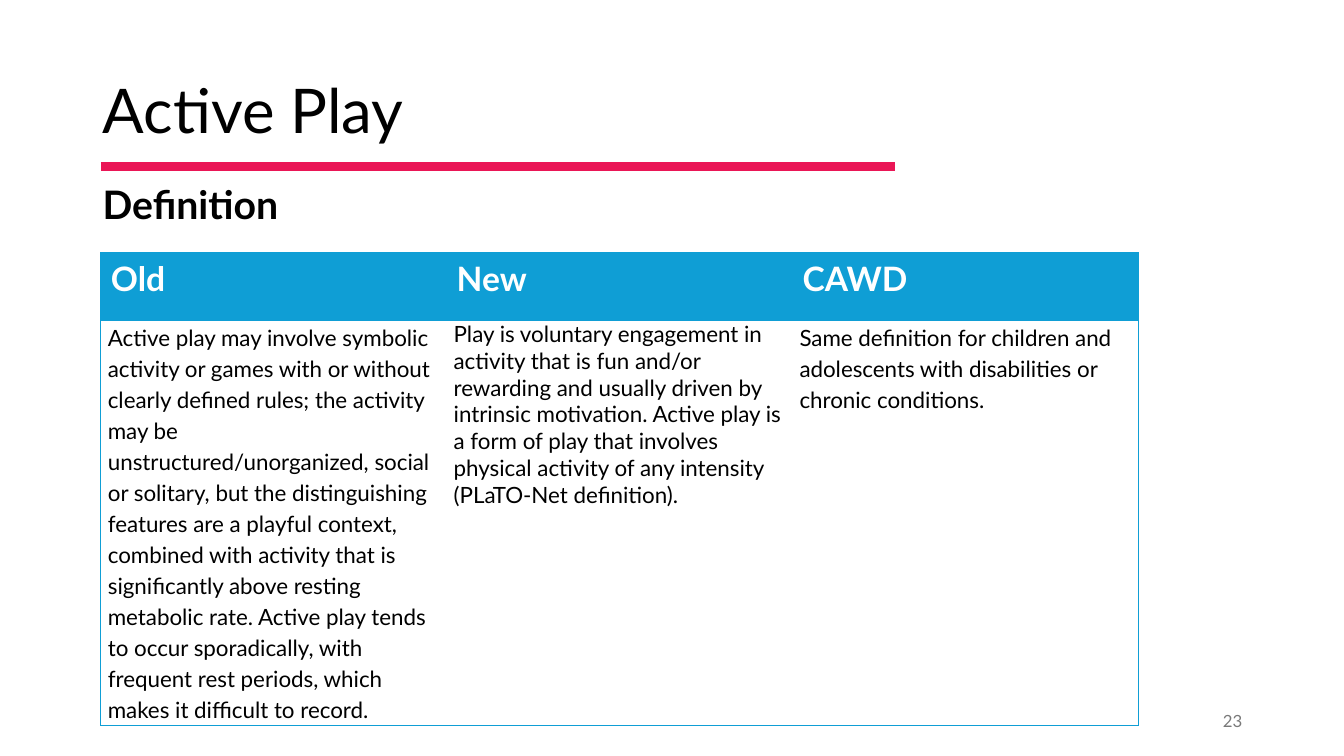
import pptx
import pptx.dml.color
import pptx.enum.shapes
import pptx.enum.text
import pptx.oxml
import pptx.oxml.ns
import pptx.util

RGB = pptx.dml.color.RGBColor
BLACK = RGB(0x00, 0x00, 0x00)
WHITE = RGB(0xFF, 0xFF, 0xFF)
GREY = RGB(0x79, 0x79, 0x79)
PINK = RGB(0xEA, 0x16, 0x56)
BLUE = RGB(0x0F, 0x9E, 0xD5)

PX = 9144
FONT = "Lato"
ALIGN = pptx.enum.text.PP_ALIGN
ANCHOR = pptx.enum.text.MSO_ANCHOR

DEFINITIONS = [
    ("Old", "Active play may involve symbolic activity or games with or without "
     "clearly defined rules; the activity may be unstructured/unorganized, social "
     "or solitary, but the distinguishing features are a playful context, combined "
     "with activity that is significantly above resting metabolic rate. Active play "
     "tends to occur sporadically, with frequent rest periods, which makes it "
     "difficult to record.", 1.16),
    ("New", "Play is voluntary engagement in activity that is fun and/or rewarding "
     "and usually driven by intrinsic motivation. Active play is a form of play that "
     "involves physical activity of any intensity (PLaTO-Net definition).", 1.0),
    ("CAWD", "Same definition for children and adolescents with disabilities or "
     "chronic conditions.", 1.16),
]


def px(*lengths):
    return [pptx.util.Emu(n * PX) for n in lengths]


class Deck:
    def __init__(self, width, height):
        self.prs = pptx.Presentation()
        self.prs.slide_width, self.prs.slide_height = px(width, height)
        self.s = self.prs.slides.add_slide(self.prs.slide_layouts[5])

    def fill_text(self, tf, text, size, color, bold=False, align=ALIGN.LEFT, spacing=1.0):
        tf.text = text
        tf.word_wrap = True
        p = tf.paragraphs[0]
        p.alignment = align
        p.line_spacing = spacing
        r = p.runs[0]
        r.font.name = FONT
        r.font.size = pptx.util.Pt(size)
        r.font.bold = bold
        r.font.color.rgb = color
        return p

    def title(self, box, text, size):
        sp = self.s.shapes.title
        sp.left, sp.top, sp.width, sp.height = px(*box)
        sp.text_frame.vertical_anchor = ANCHOR.MIDDLE
        self.fill_text(sp.text_frame, text, size, BLACK, spacing=0.9)

    def text(self, box, text, size, color, anchor=ANCHOR.TOP, **style):
        sp = self.s.shapes.add_textbox(*px(*box))
        sp.text_frame.vertical_anchor = anchor
        self.fill_text(sp.text_frame, text, size, color, **style)

    def line(self, ends, color, width):
        kind = pptx.enum.shapes.MSO_CONNECTOR.STRAIGHT
        sp = self.s.shapes.add_connector(kind, *px(*ends))
        sp.line.color.rgb = color
        sp.line.width = pptx.util.Pt(width)
        sp._element.spPr.append(pptx.oxml.parse_xml(
            f"<a:effectLst {pptx.oxml.ns.nsdecls('a')}/>"))

    def borders(self, cell, sides, color):
        tcPr = cell._tc.get_or_add_tcPr()
        for i, side in enumerate("LRTB"):
            paint = (f'<a:solidFill><a:srgbClr val="{color}"/></a:solidFill>'
                     if side in sides else "<a:noFill/>")
            tcPr.insert(i, pptx.oxml.parse_xml(
                f'<a:ln{side} {pptx.oxml.ns.nsdecls("a")} w="12700">{paint}</a:ln{side}>'))

    def table(self, box, header_height, columns):
        left, top, width, height = box
        tbl = self.s.shapes.add_table(2, len(columns), *px(*box)).table
        tbl.first_row = tbl.horz_banding = False
        tbl.rows[0].height, tbl.rows[1].height = px(header_height, height - header_height)
        for i, (heading, body, spacing) in enumerate(columns):
            tbl.columns[i].width = px(width // len(columns))[0]
            edges = "L" * (i == 0) + "R" * (i == len(columns) - 1)
            head, cell = tbl.cell(0, i), tbl.cell(1, i)
            for c, fill, sides in ((head, BLUE, "T"), (cell, WHITE, "TB")):
                c.fill.solid()
                c.fill.fore_color.rgb = fill
                self.borders(c, sides + edges, BLUE)
            self.fill_text(head.text_frame, heading, 24, WHITE, bold=True)
            cell.margin_left, cell.margin_top, cell.margin_right, cell.margin_bottom = px(7, 0, 7, 0)
            p = self.fill_text(cell.text_frame, body, 16, BLACK, spacing=spacing)
            if spacing > 1:
                p.space_after = pptx.util.Pt(8)


def main():
    deck = Deck(1333, 750)
    deck.title((92, 40, 1150, 145), "Active Play", 44)
    deck.text((942, 695, 300, 40), "23", 12, GREY, anchor=ANCHOR.MIDDLE, align=ALIGN.RIGHT)
    deck.line((100, 165, 888, 165), PINK, 6)
    deck.text((92, 174, 281, 57), "Definition", 28, BLACK, bold=True)
    deck.table((100, 251, 1029, 468), 67, DEFINITIONS)
    deck.prs.save("out.pptx")


if __name__ == "__main__":
    main()
